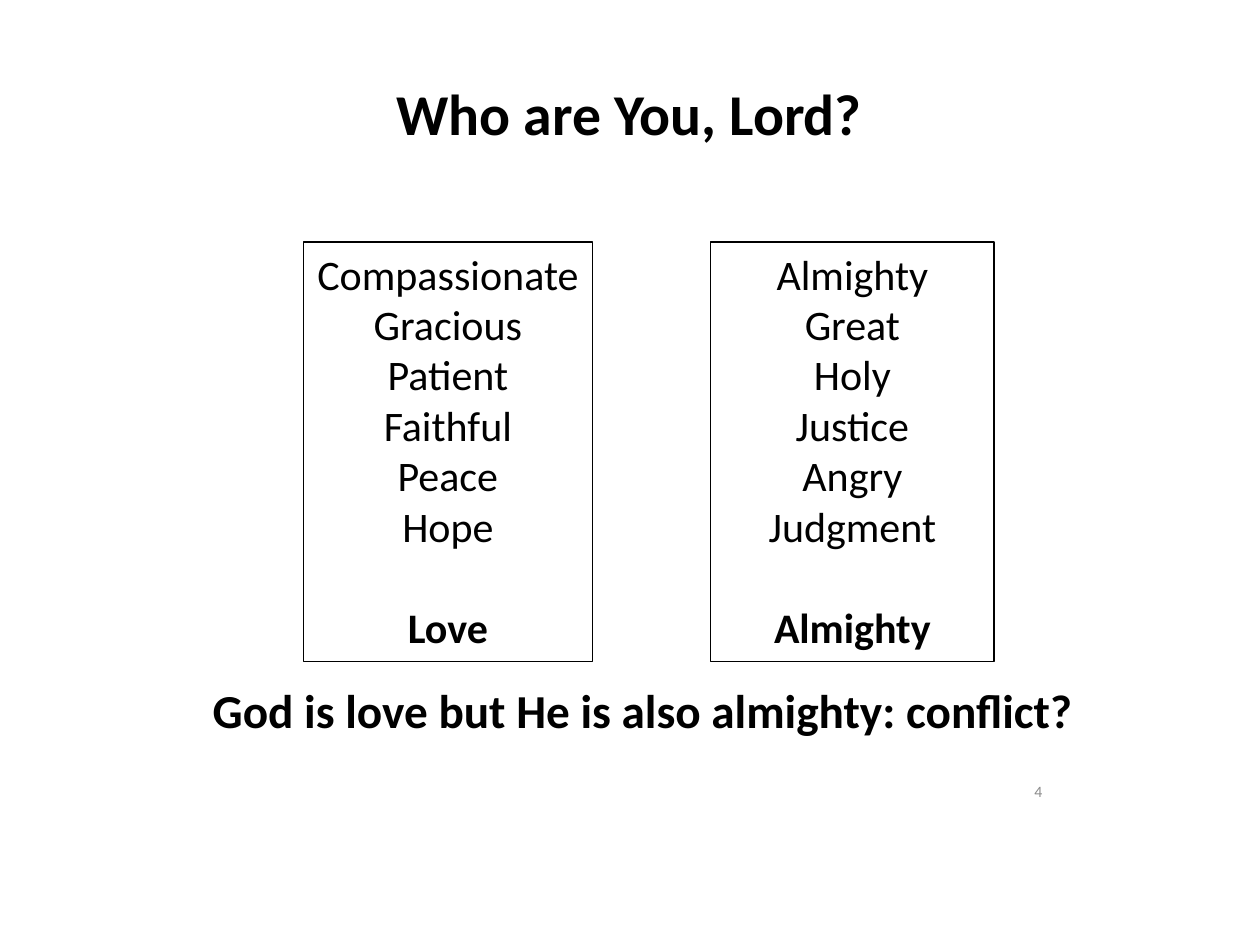
from pptx import Presentation
from pptx.dml.color import RGBColor
from pptx.enum.shapes import MSO_SHAPE
from pptx.enum.text import MSO_ANCHOR, PP_ALIGN
from pptx.util import Inches, Pt

RECT = MSO_SHAPE.RECTANGLE
TOP, MIDDLE = MSO_ANCHOR.TOP, MSO_ANCHOR.MIDDLE
LEFT, CENTER, RIGHT = PP_ALIGN.LEFT, PP_ALIGN.CENTER, PP_ALIGN.RIGHT
COLORS = {"ink": "000000", "muted": "8C8C8C"}
LINE = 29.3  # height of one 24 pt line, in points

TRAITS = [
    (2.41, 2.29, ["Compassionate", "Gracious", "Patient", "Faithful",
                  "Peace", "Hope"], "Love"),
    (5.64, 2.25, ["Almighty", "Great", "Holy", "Justice",
                  "Angry", "Judgment"], "Almighty"),
]


def write(shape, lines, size, align, anchor=TOP, color="ink", bold=False, wrap=True):
    frame = shape.text_frame
    frame.text = "\n".join(lines)
    frame.word_wrap = wrap
    frame.vertical_anchor = anchor
    look = {"name": "Calibri", "size": Pt(size), "bold": bold}
    for para in frame.paragraphs:
        para.alignment = align
        font = para.runs[0].font
        for key, value in look.items():
            setattr(font, key, value)
        font.color.rgb = RGBColor.from_string(COLORS[color])
    return frame.paragraphs


deck = Presentation()
deck.slide_width, deck.slide_height = Inches(10), Inches(7.5)
slide = deck.slides.add_slide(deck.slide_layouts[5])
shapes = slide.shapes

title = shapes.title
title.left, title.top = Inches(1.62), Inches(0.42)
title.width, title.height = Inches(6.75), Inches(0.94)
write(title, ["Who are You, Lord?"], 33, CENTER, MIDDLE, bold=True)

number = shapes.add_textbox(Inches(6.62), Inches(6.13), Inches(1.75), Inches(0.3))
write(number, ["4"], 9, RIGHT, MIDDLE, "muted")

for left, width, traits, total in TRAITS:
    box = shapes.add_shape(RECT, Inches(left), Inches(1.92), Inches(width), Inches(3.33))
    box.shadow.inherit = False
    box.fill.background()
    box.line.color.rgb = RGBColor.from_string(COLORS["ink"])
    box.line.width = Pt(0.75)
    last = write(box, traits + [total], 24, CENTER)[-1]
    last.space_before = Pt(LINE)
    last.runs[0].font.bold = True

question = shapes.add_textbox(Inches(1.59), Inches(5.36), Inches(7.2), Inches(0.56))
write(question, ["God is love but He is also almighty: conflict?"], 27, LEFT,
      bold=True, wrap=False)

deck.save("out.pptx")
